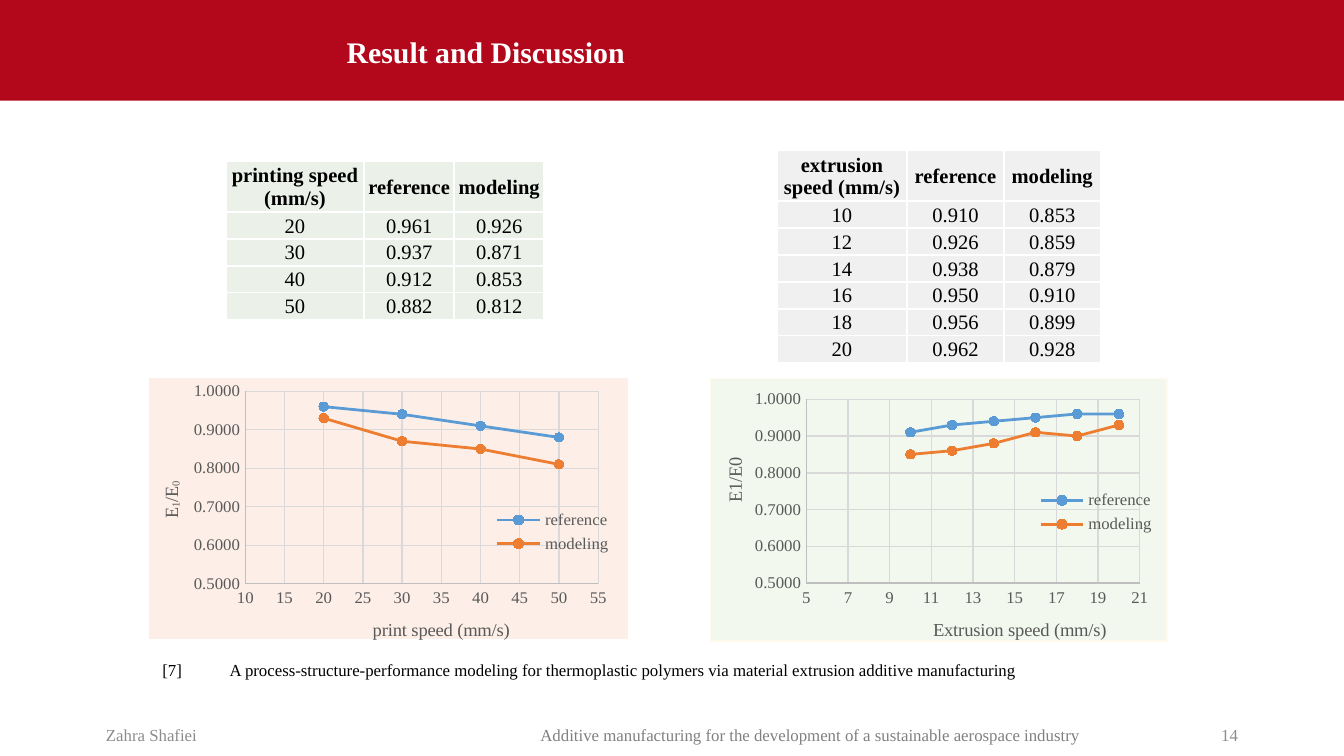
import pptx
import pptx.util
import pptx.chart.data
import pptx.dml.color
import pptx.enum.chart
import pptx.enum.shapes
import pptx.enum.text
import pptx.oxml
import pptx.oxml.ns

FONT = "Times New Roman"
COLORS = {
    "banner": "B3071B", "white": "FFFFFF", "black": "000000",
    "author": "8C8C8C", "footer": "808080", "label": "595959",
    "axis": "BFBFBF", "grid": "D9D9D9",
    "reference": "5B9BD5", "modeling": "ED7D31",
}
TITLE = "Result and Discussion"
CITATION = ("[7]\tA process-structure-performance modeling for thermoplastic polymers "
            "via material extrusion additive manufacturing")
FOOTERS = [
    ("Zahra Shafiei", (0.69, 5.32, 2.67, 0.3), "author", "LEFT"),
    ("Additive manufacturing for the development of a sustainable aerospace industry",
     (3.55, 5.32, 4.95, 0.3), "footer", "CENTER"),
    ("14", (8.83, 5.32, 0.48, 0.3), "author", "RIGHT"),
]
STUDIES = [
    {
        "header": ["printing speed (mm/s)", "reference", "modeling"],
        "rows": [(20, 0.961, 0.926), (30, 0.937, 0.871),
                 (40, 0.912, 0.853), (50, 0.882, 0.812)],
        "table_at": (1.68, 1.2, 2.36, 1.18), "columns": (1.03, 0.67, 0.67),
        "table_fill": "EBF1E9",
        "chart_at": (1.11, 2.81, 3.56, 2), "chart_fill": "FDEFE7", "chart_border": "FDEFE7",
        "speed_title": "print speed (mm/s)", "speed_scale": (10, 55, 5),
        "ratio_title": ["E", "1", "/E", "0"],
        "plot": (0.2, 0.05, 0.74, 0.74), "legend": (0.72, 0.49, 0.25, 0.2),
        "speed_title_at": (0.46, 0.91), "ratio_title_at": (0.01, 0.38),
    },
    {
        "header": ["extrusion speed (mm/s)", "reference", "modeling"],
        "rows": [(10, 0.910, 0.853), (12, 0.926, 0.859), (14, 0.938, 0.879),
                 (16, 0.950, 0.910), (18, 0.956, 0.899), (20, 0.962, 0.928)],
        "table_at": (5.78, 1.12, 2.41, 1.58), "columns": (0.97, 0.72, 0.72),
        "table_fill": "F0F0F0",
        "chart_at": (5.28, 2.81, 3.41, 2), "chart_fill": "F2F8EE", "chart_border": "FFFAEB",
        "speed_title": "Extrusion speed (mm/s)", "speed_scale": (5, 21, 2),
        "ratio_title": ["E1/E0"],
        "plot": (0.21, 0.08, 0.73, 0.7), "legend": (0.72, 0.41, 0.25, 0.2),
        "speed_title_at": (0.48, 0.9), "ratio_title_at": (0.02, 0.29),
    },
]
ROW_HEIGHT = 0.2


def inches(values):
    return [pptx.util.Inches(value) for value in values]


def rgb(value):
    return pptx.dml.color.RGBColor.from_string(value)


def write(frame, text, size=9, color="black", bold=False, align=None):
    paragraph = frame.paragraphs[0]
    if align:
        paragraph.alignment = getattr(pptx.enum.text.PP_ALIGN, align)
    pieces = [text] if isinstance(text, str) else text
    for index, piece in enumerate(pieces):
        run = paragraph.add_run()
        run.text = piece
        run.font.name = FONT
        run.font.size = pptx.util.Pt(size)
        run.font.bold = bold
        run.font.color.rgb = rgb(COLORS[color])
        if index % 2:
            run.font._element.set("baseline", "-8000")
    return paragraph


def add_text(slide, text, box, **style):
    frame = slide.shapes.add_textbox(*inches(box)).text_frame
    frame.word_wrap = True
    return frame, write(frame, text, **style)


def border_cell(cell):
    properties = cell._tc.get_or_add_tcPr()
    for index, side in enumerate(("lnL", "lnR", "lnT", "lnB")):
        properties.insert(index, pptx.oxml.parse_xml(
            f'<a:{side} {pptx.oxml.ns.nsdecls("a")} w="12700"><a:solidFill>'
            f'<a:srgbClr val="{COLORS["white"]}"/></a:solidFill></a:{side}>'))


def add_speed_table(slide, study):
    rows = [study["header"]] + [
        [str(speed), f"{reference:.3f}", f"{modeling:.3f}"]
        for speed, reference, modeling in study["rows"]]
    box = inches(study["table_at"])
    holder = slide.shapes.add_table(len(rows), len(study["columns"]), *box)
    table = holder.table
    table.horz_banding = False
    for column, width in zip(table.columns, inches(study["columns"])):
        column.width = width
    for row in table.rows:
        row.height = pptx.util.Inches(ROW_HEIGHT)
    holder.height = box[3]
    for row_index, row in enumerate(rows):
        for column_index, text in enumerate(row):
            cell = table.cell(row_index, column_index)
            cell.margin_left = cell.margin_right = cell.margin_top = pptx.util.Inches(0.01)
            cell.margin_bottom = 0
            cell.vertical_anchor = pptx.enum.text.MSO_ANCHOR.MIDDLE
            cell.fill.solid()
            cell.fill.fore_color.rgb = rgb(study["table_fill"])
            border_cell(cell)
            write(cell.text_frame, text, size=11, bold=row_index == 0, align="CENTER")


def set_layout(parent, position, inner=False):
    for old in parent.xpath("./c:layout"):
        parent.remove(old)
    keys = ("x", "y", "w", "h")[:len(position)]
    target = '<c:layoutTarget val="inner"/>' if inner else ""
    modes = "".join(f'<c:{key}Mode val="edge"/>' for key in keys[:2])
    values = "".join(f'<c:{key} val="{value}"/>' for key, value in zip(keys, position))
    layout = pptx.oxml.parse_xml(
        f'<c:layout {pptx.oxml.ns.nsdecls("c")}><c:manualLayout>'
        f'{target}{modes}{values}</c:manualLayout></c:layout>')
    overlay = parent.xpath("./c:overlay")
    if overlay:
        overlay[0].addprevious(layout)
    else:
        parent.insert(0, layout)


def format_axis(axis, scale, number_format, title, title_at):
    axis.minimum_scale, axis.maximum_scale, axis.major_unit = scale
    axis.major_tick_mark = axis.minor_tick_mark = pptx.enum.chart.XL_TICK_MARK.NONE
    axis.has_major_gridlines = True
    for line, color in ((axis.format.line, "axis"), (axis.major_gridlines.format.line, "grid")):
        line.color.rgb = rgb(COLORS[color])
        line.width = pptx.util.Pt(0.75)
    axis.tick_labels.number_format = number_format
    axis.tick_labels.number_format_is_linked = False
    axis.tick_labels.font.size = pptx.util.Pt(9)
    axis.tick_labels.font.name = FONT
    axis.tick_labels.font.color.rgb = rgb(COLORS["label"])
    write(axis.axis_title.text_frame, title, size=10, color="label")
    set_layout(axis.axis_title.element, title_at)


def add_speed_chart(slide, study):
    data = pptx.chart.data.XyChartData()
    for column, name in enumerate(study["header"][1:], 1):
        series = data.add_series(name)
        for row in study["rows"]:
            series.add_data_point(row[0], round(row[column], 2))
    chart = slide.shapes.add_chart(
        pptx.enum.chart.XL_CHART_TYPE.XY_SCATTER_LINES, *inches(study["chart_at"]), data).chart
    chart.has_title = False
    chart.font.name = FONT
    chart.font.size = pptx.util.Pt(10)
    chart.font.color.rgb = rgb(COLORS["black"])
    chart.element.xpath("./c:chart")[0].addnext(pptx.oxml.parse_xml(
        f'<c:spPr {pptx.oxml.ns.nsdecls("c", "a")}>'
        f'<a:solidFill><a:srgbClr val="{study["chart_fill"]}"/></a:solidFill>'
        f'<a:ln w="9525"><a:solidFill><a:srgbClr val="{study["chart_border"]}"/>'
        '</a:solidFill></a:ln></c:spPr>'))
    format_axis(chart.category_axis, study["speed_scale"], "General",
                study["speed_title"], study["speed_title_at"])
    format_axis(chart.value_axis, (0.5, 1, 0.1), "0.0000",
                study["ratio_title"], study["ratio_title_at"])
    ratio_body = chart.value_axis.axis_title.element.xpath(".//a:bodyPr")[0]
    ratio_body.set("rot", "-5400000")
    ratio_body.set("vert", "horz")
    chart.plots[0].vary_by_categories = False
    for series in chart.plots[0].series:
        color = rgb(COLORS[series.name])
        series.format.line.color.rgb = color
        series.format.line.width = pptx.util.Pt(1.5)
        series.marker.style = pptx.enum.chart.XL_MARKER_STYLE.CIRCLE
        series.marker.size = 5
        series.marker.format.fill.solid()
        series.marker.format.fill.fore_color.rgb = color
        series.marker.format.line.color.rgb = color
    chart.has_legend = True
    chart.legend.position = pptx.enum.chart.XL_LEGEND_POSITION.RIGHT
    chart.legend.include_in_layout = False
    chart.legend.font.name = FONT
    chart.legend.font.size = pptx.util.Pt(9)
    chart.legend.font.color.rgb = rgb(COLORS["label"])
    set_layout(chart.element.xpath(".//c:legend")[0], study["legend"])
    set_layout(chart.element.xpath(".//c:plotArea")[0], study["plot"], inner=True)


def main():
    deck = pptx.Presentation()
    deck.slide_width = pptx.util.Inches(10)
    deck.slide_height = pptx.util.Pt(405)
    slide = deck.slides.add_slide(deck.slide_layouts[5])

    title = slide.shapes.title
    title.left, title.top, title.width, title.height = inches((2.48, 0.14, 6.53, 0.52))
    title.text_frame.vertical_anchor = pptx.enum.text.MSO_ANCHOR.MIDDLE
    heading = write(title.text_frame, TITLE, size=16, color="white", bold=True, align="LEFT")
    heading.line_spacing = 0.9

    banner = slide.shapes.add_shape(
        pptx.enum.shapes.MSO_SHAPE.RECTANGLE, *inches((0, 0, 10, 0.75)))
    banner.shadow.inherit = False
    banner.fill.solid()
    banner.fill.fore_color.rgb = rgb(COLORS["banner"])
    banner.line.fill.background()
    title.element.addprevious(banner.element)

    for text, box, color, align in FOOTERS:
        frame, _ = add_text(slide, text, box, color=color, align=align)
        frame.vertical_anchor = pptx.enum.text.MSO_ANCHOR.MIDDLE
    for study in STUDIES:
        add_speed_table(slide, study)
        add_speed_chart(slide, study)
    _, citation = add_text(slide, CITATION, (1.11, 4.86, 7.38, 0.25), align="JUSTIFY")
    indent = citation._p.get_or_add_pPr()
    indent.set("marL", str(pptx.util.Inches(0.5)))
    indent.set("indent", str(pptx.util.Inches(-0.5)))
    deck.save("out.pptx")


if __name__ == "__main__":
    main()
